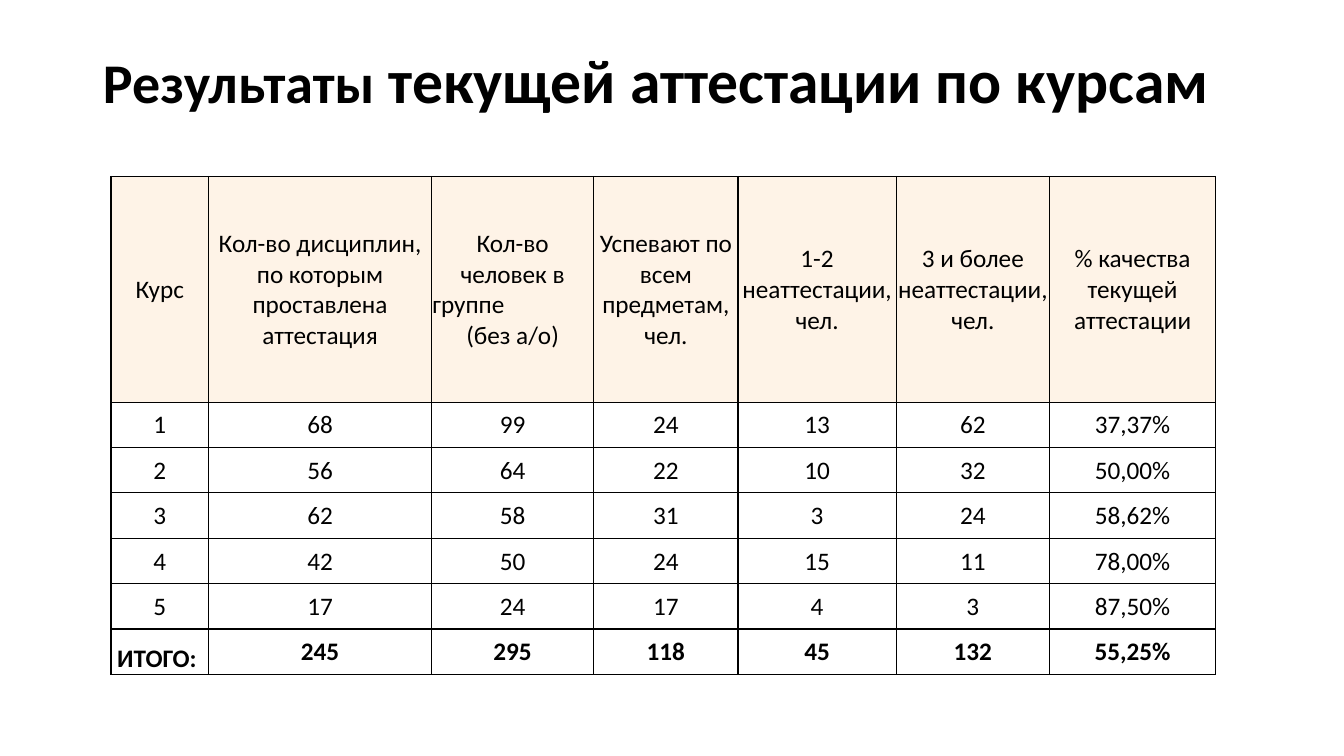
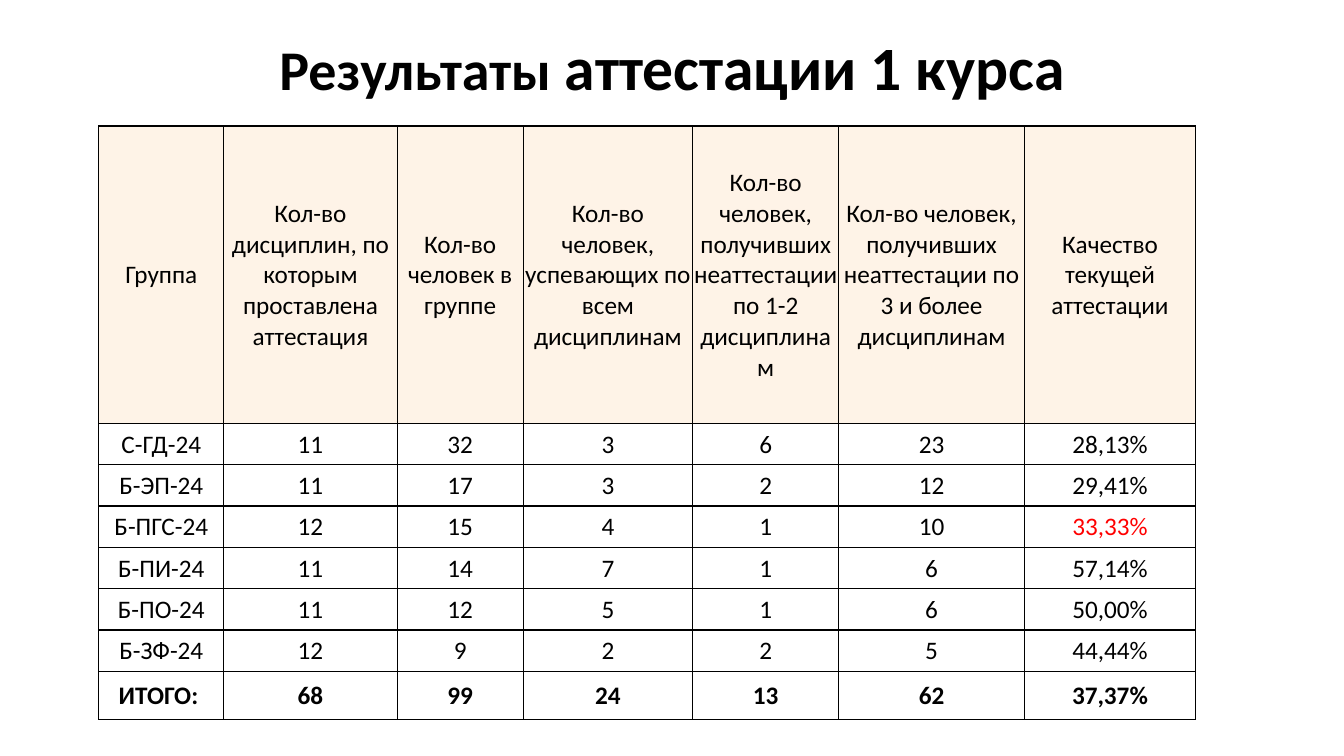
import pptx
import pptx.dml.color
import pptx.enum.text
import pptx.oxml
import pptx.util
from pptx.oxml.ns import nsdecls
from pptx.util import Inches

FONT = "Calibri"
BLACK, RED, HEADER_FILL = "000000", "FF0000", "FEF3E7"
ALIGN = pptx.enum.text.PP_ALIGN
ANCHOR = pptx.enum.text.MSO_ANCHOR
TITLE_LEFT, TITLE_WIDTH = 0.92, 11.5


def rgb(value):
    return pptx.dml.color.RGBColor.from_string(value)


def add_run(paragraph, text, size, bold=False, color=BLACK):
    run = paragraph.add_run()
    run.text = text
    run.font.name = FONT
    run.font.size = pptx.util.Pt(size)
    run.font.bold = bold
    run.font.color.rgb = rgb(color)


def add_title(slide, rest, top, height, align):
    """Fill the title: a 40 pt first word, the rest in 44 pt."""
    title = slide.shapes.title
    title.left, title.top = Inches(TITLE_LEFT), Inches(top)
    title.width, title.height = Inches(TITLE_WIDTH), Inches(height)
    frame = title.text_frame
    frame.auto_size = pptx.enum.text.MSO_AUTO_SIZE.NONE
    frame.vertical_anchor = ANCHOR.MIDDLE
    paragraph = frame.paragraphs[0]
    paragraph.alignment = align
    paragraph.line_spacing = 0.9
    add_run(paragraph, "Результаты", 40, bold=True)
    add_run(paragraph, rest, 44, bold=True)


def add_borders(cell):
    properties = cell._tc.get_or_add_tcPr()
    for side in ("lnL", "lnR", "lnT", "lnB"):
        properties.append(pptx.oxml.parse_xml(
            f'<a:{side} {nsdecls("a")} w="12700"><a:solidFill>'
            f'<a:srgbClr val="{BLACK}"/></a:solidFill></a:{side}>'))


def fill_cell(cell, content, header, total, color):
    """Content is a string or a list of (text, alignment) paragraphs."""
    add_borders(cell)
    if header:
        cell.fill.solid()
        cell.fill.fore_color.rgb = rgb(HEADER_FILL)
    else:
        cell.fill.background()
    cell.margin_left = cell.margin_right = cell.margin_top = Inches(0.01)
    cell.margin_bottom = 0
    cell.vertical_anchor = ANCHOR.MIDDLE
    lines = [(content, ALIGN.CENTER)] if isinstance(content, str) else content
    frame = cell.text_frame
    for index, (text, align) in enumerate(lines):
        paragraph = frame.add_paragraph() if index else frame.paragraphs[0]
        paragraph.alignment = align
        add_run(paragraph, text, 18, bold=total, color=color)


def add_results(slide, left, top, widths, heights, rows, red_cells=()):
    """Add a table whose first row is the header and last row the total."""
    table = slide.shapes.add_table(
        len(rows), len(widths), Inches(left), Inches(top),
        Inches(sum(widths)), Inches(sum(heights))).table
    table.first_row = table.horz_banding = False
    for column, width in zip(table.columns, widths):
        column.width = Inches(width)
    for row, height in zip(table.rows, heights):
        row.height = Inches(height)
    for r, row in enumerate(rows):
        for c, content in enumerate(row):
            fill_cell(table.cell(r, c), content, r == 0, r == len(rows) - 1,
                      RED if (r, c) in red_cells else BLACK)
    return table


def add_courses_slide(slide):
    add_title(slide, " текущей аттестации по курсам", 0.4, 0.85, ALIGN.LEFT)
    people = [("Кол-во человек в", ALIGN.CENTER), ("группе", ALIGN.LEFT),
              ("(без а/о)", ALIGN.CENTER)]
    rows = [
        ("Курс", "Кол-во дисциплин, по которым проставлена аттестация", people,
         "Успевают по всем предметам, чел.", "1-2 неаттестации, чел.",
         "3 и более неаттестации, чел.", "% качества текущей аттестации"),
        ("1", "68", "99", "24", "13", "62", "37,37%"),
        ("2", "56", "64", "22", "10", "32", "50,00%"),
        ("3", "62", "58", "31", "3", "24", "58,62%"),
        ("4", "42", "50", "24", "15", "11", "78,00%"),
        ("5", "17", "24", "17", "4", "3", "87,50%"),
        ("ИТОГО: ", "245", "295", "118", "45", "132", "55,25%"),
    ]
    results = add_results(slide, 1.1, 1.75,
                          [0.97, 2.21, 1.61, 1.43, 1.57, 1.52, 1.65],
                          [2.24] + [0.45] * 6, rows)
    results.cell(len(rows) - 1, 0).vertical_anchor = ANCHOR.BOTTOM


def add_groups_slide(slide):
    add_title(slide, " аттестации 1 курса", 0.15, 1.1, ALIGN.CENTER)
    rows = [
        ("Группа", "Кол-во дисциплин, по которым проставлена аттестация",
         "Кол-во человек в группе",
         "Кол-во человек, успевающих по всем дисциплинам",
         "Кол-во человек, получивших неаттестации по 1-2 дисциплинам",
         "Кол-во человек, получивших неаттестации по 3 и более дисциплинам",
         "Качество текущей аттестации"),
        ("С-ГД-24", "11", "32", "3", "6", "23", "28,13%"),
        ("Б-ЭП-24", "11", "17", "3", "2", "12", "29,41%"),
        ("Б-ПГС-24", "12", "15", "4", "1", "10", "33,33%"),
        ("Б-ПИ-24", "11", "14", "7", "1", "6", "57,14%"),
        ("Б-ПО-24", "11", "12", "5", "1", "6", "50,00%"),
        ("Б-ЗФ-24", "12", "9", "2", "2", "5", "44,44%"),
        ("ИТОГО: ", "68", "99", "24", "13", "62", "37,37%"),
    ]
    add_results(slide, 0.98, 1.25,
                [1.24, 1.72, 1.25, 1.68, 1.45, 1.84, 1.7],
                [2.95] + [0.41] * 6 + [0.48], rows, red_cells={(3, 6)})


def main():
    deck = pptx.Presentation()
    deck.slide_width, deck.slide_height = Inches(13.33), Inches(7.5)
    title_only = deck.slide_layouts[5]
    for build in (add_courses_slide, add_groups_slide):
        build(deck.slides.add_slide(title_only))
    deck.save("out.pptx")


if __name__ == "__main__":
    main()
